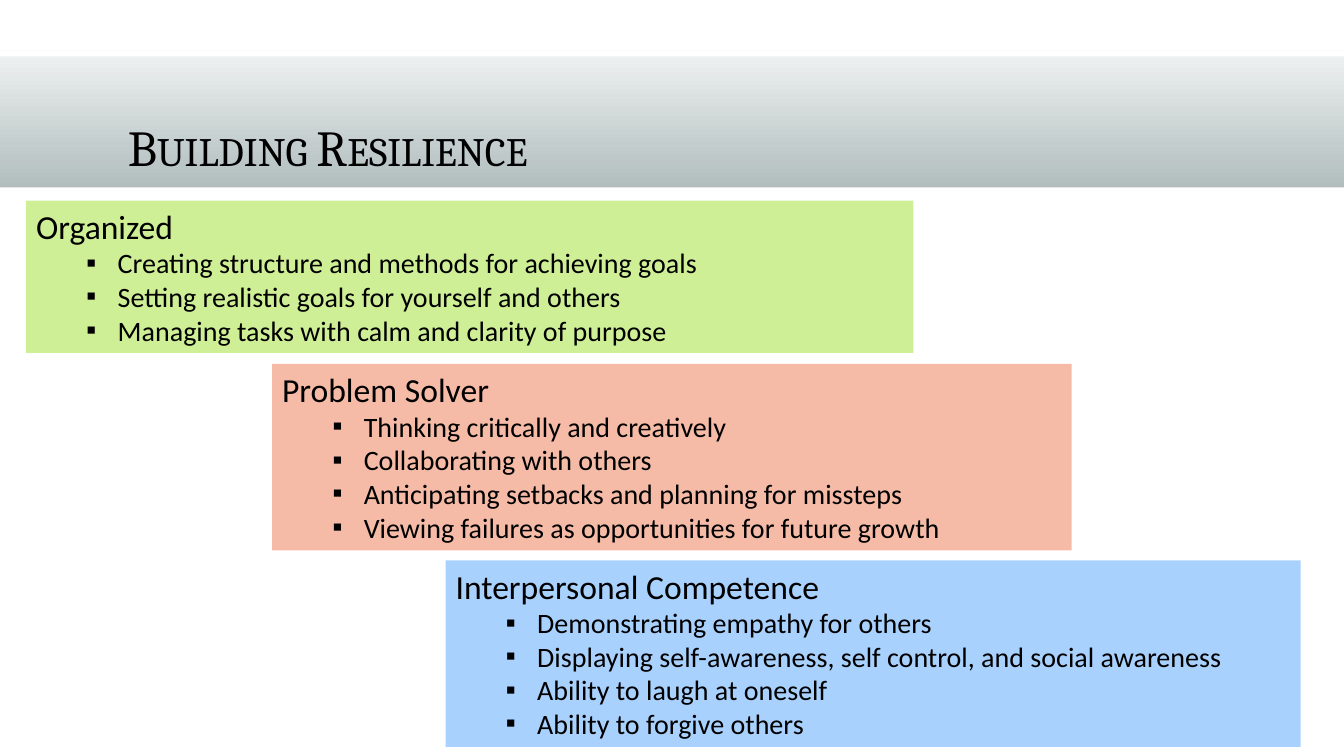
"""Build the Building Resilience slide with three stepped cards."""
from lxml.etree import SubElement as Sub
from pptx import Presentation
from pptx.dml.color import RGBColor as Rgb
from pptx.enum.shapes import MSO_SHAPE as Kind
from pptx.enum.text import MSO_ANCHOR as Anchor, PP_ALIGN as Align
from pptx.oxml.ns import qn
from pptx.util import Inches, Pt

TITLE = "Building Resilience"
CARDS = [
    ("Organized", "CFEF96", (0.26, 1.99, 8.8, 1.51), [
        "Creating structure and methods for achieving goals",
        "Setting realistic goals for yourself and others",
        "Managing tasks with calm and clarity of purpose"]),
    ("Problem Solver", "F5BBA7", (2.7, 3.61, 7.93, 1.85), [
        "Thinking critically and creatively",
        "Collaborating with others",
        "Anticipating setbacks and planning for missteps",
        "Viewing failures as opportunities for future growth"]),
    ("Interpersonal Competence", "A9D1FE", (4.42, 5.56, 8.48, 1.85), [
        "Demonstrating empathy for others",
        "Displaying self-awareness, self control, and social awareness",
        "Ability to laugh at oneself",
        "Ability to forgive others"]),
]
THEME = {
    "ink": Rgb.from_string("000000"),
    "rule": "FFFFFF",
    "band": ("EFF2F2", "B0BCBC"),
    "title": {"name": "Cambria", "size": Pt(36)},
    "head": {"name": "Calibri", "size": Pt(24)},
    "item": {"name": "Calibri", "size": Pt(20)},
}
WIDE, HIGH = 13.33, 7.5
BAND = (0, 0.5, WIDE, 1.39)
RULES = [(0, top, WIDE, 0.06) for top in (1.86, 0.5)]


def style(font, look):
    for key, val in THEME[look].items():
        setattr(font, key, val)
    font.color.rgb = THEME["ink"]


def block(slide, spot, tint=None):
    box = slide.shapes.add_shape(Kind.RECTANGLE, *map(Inches, spot))
    box.shadow.inherit = False
    box.line.fill.background()
    if tint:
        box.fill.solid()
        box.fill.fore_color.rgb = Rgb.from_string(tint)
    return box


def write(para, text, look, bullet=False):
    para.alignment = Align.LEFT
    if bullet:
        props = para._p.get_or_add_pPr()
        props.set("lvl", "1")
        props.set("marL", str(Inches(0.81)))
        props.set("indent", str(Inches(-0.31)))
        Sub(props, qn("a:buFont"), typeface="Calibri")
        Sub(props, qn("a:buChar"), char="▪")
    run = para.add_run()
    run.text = text
    style(run.font, look)
    return run


def main():
    deck = Presentation()
    deck.slide_width, deck.slide_height = Inches(WIDE), Inches(HIGH)
    slide = deck.slides.add_slide(deck.slide_layouts[6])

    band = block(slide, BAND)
    band.fill.gradient()
    band.fill.gradient_angle = 270
    for stop, tint, place in zip(band.fill.gradient_stops, THEME["band"], (0, 1)):
        stop.color.rgb = Rgb.from_string(tint)
        stop.position = place
    for spot in RULES:
        block(slide, spot, THEME["rule"])

    frame = slide.shapes.add_textbox(*map(Inches, (1.17, 0.61, 11, 1.2))).text_frame
    frame.word_wrap = True
    frame.vertical_anchor = Anchor.BOTTOM
    frame.paragraphs[0].line_spacing = 0.9
    run = write(frame.paragraphs[0], TITLE, "title")
    run.font._element.set("cap", "small")

    for head, tint, spot, items in CARDS:
        frame = block(slide, spot, tint).text_frame
        frame.word_wrap = True
        frame.vertical_anchor = Anchor.TOP
        write(frame.paragraphs[0], head, "head")
        for item in items:
            write(frame.add_paragraph(), item, "item", True)

    deck.save("out.pptx")


if __name__ == "__main__":
    main()
